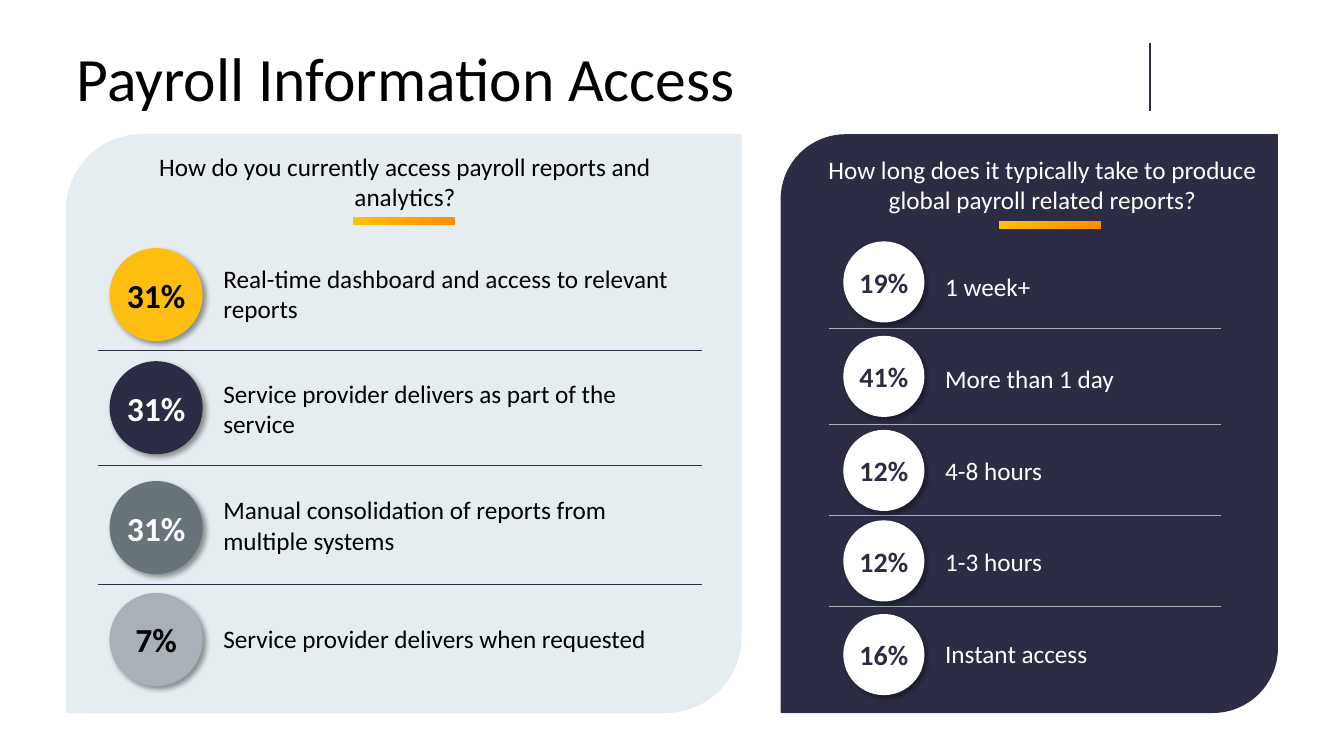
"""Build the payroll information access slide."""
from dataclasses import dataclass

from lxml import etree
from pptx import Presentation
from pptx.dml.color import RGBColor
from pptx.enum.shapes import MSO_CONNECTOR, MSO_SHAPE
from pptx.enum.text import MSO_ANCHOR, PP_ALIGN
from pptx.oxml import parse_xml
from pptx.oxml.ns import nsdecls, qn
from pptx.shapes.autoshape import Shape
from pptx.slide import Slide
from pptx.util import Cm, Pt

STRAIGHT = MSO_CONNECTOR.STRAIGHT
CIRCLE = MSO_SHAPE.OVAL
RECTANGLE = MSO_SHAPE.RECTANGLE
ROUNDED_DIAGONAL = MSO_SHAPE.ROUND_2_DIAG_RECTANGLE
MIDDLE = MSO_ANCHOR.MIDDLE
TOP = MSO_ANCHOR.TOP
LEFT = PP_ALIGN.LEFT
CENTER = PP_ALIGN.CENTER


@dataclass(frozen=True)
class Theme:
    font: str = "Calibri"
    black: str = "000000"
    white: str = "FFFFFF"
    navy: str = "2C2D44"
    mist: str = "E5EDF0"
    yellow: str = "FEBD11"
    slate: str = "68737A"
    silver: str = "A7B1B7"
    accent_start: str = "FFC009"
    accent_end: str = "FF8D02"
    title_size: float = 44
    large_size: float = 24
    medium_size: float = 20
    body_size: float = 18


@dataclass(frozen=True)
class Box:
    left: float
    top: float
    width: float
    height: float

    def lengths(self) -> tuple[Cm, Cm, Cm, Cm]:
        """Return the box as lengths in centimetres."""
        return Cm(self.left), Cm(self.top), Cm(self.width), Cm(self.height)


@dataclass(frozen=True)
class Panel:
    question: str
    frame: Box
    heading: Box
    accent: Box
    fill: str
    text_color: str
    divider_color: str
    divider_left: float
    divider_right: float
    divider_tops: tuple[float, ...]


@dataclass(frozen=True)
class Badge:
    share: str
    top: float
    fill: str
    text_color: str


@dataclass(frozen=True)
class Answer:
    text: str
    top: float
    height: float


THEME = Theme()
TITLE = Box(1.68, 1.09, 27.64, 1.96)
TIME_LIST = Box(23.57, 6.71, 6.88, 10.26)
TIME_GAP = 44

PANELS = (
    Panel("How do you currently access payroll reports and analytics?",
          Box(1.68, 3.4, 16.99, 14.55), Box(2.79, 3.68, 14.83, 1.8), Box(8.89, 5.46, 2.59, 0.2),
          THEME.mist, THEME.black, THEME.navy, 2.46, 17.68, (8.84, 11.73, 14.73)),
    Panel("How long does it typically take to produce global payroll related reports?",
          Box(19.69, 3.4, 12.5, 14.55), Box(20.35, 3.76, 11.84, 1.8), Box(25.17, 5.56, 2.59, 0.2),
          THEME.navy, THEME.white, THEME.silver, 20.88, 30.78, (8.28, 10.69, 12.98, 15.29)),
)
ACCESS_BADGES = (
    Badge("31%", 6.27, THEME.yellow, THEME.black),
    Badge("31%", 9.12, THEME.navy, THEME.white),
    Badge("31%", 12.14, THEME.slate, THEME.white),
    Badge("7%", 14.96, THEME.silver, THEME.black),
)
ACCESS_ANSWERS = (
    Answer("Real-time dashboard and access to relevant reports", 6.5, 1.8),
    Answer("Service provider delivers as part of the service", 9.4, 1.8),
    Answer("Manual consolidation of reports from multiple systems", 12.34, 1.8),
    Answer("Service provider delivers when requested", 15.57, 1.02),
)
TIME_BADGES = tuple(
    Badge(share, top, THEME.white, THEME.navy)
    for share, top in (("19%", 6.1), ("41%", 8.48), ("12%", 10.85), ("12%", 13.13), ("16%", 15.49))
)
TIME_ANSWERS = ("1 week+", "More than 1 day", "4-8 hours", "1-3 hours", "Instant access")


def write(shape: Shape, lines: tuple[str, ...], size: float, color: str, align: PP_ALIGN = LEFT,
          anchor: MSO_ANCHOR = TOP, bold: bool = False, gap: float = 0, spacing: float = 1) -> None:
    """Write one paragraph per line into a shape."""
    frame = shape.text_frame
    frame.word_wrap = True
    frame.vertical_anchor = anchor
    for index, line in enumerate(lines):
        paragraph = frame.add_paragraph() if index else frame.paragraphs[0]
        paragraph.alignment = align
        paragraph.line_spacing = spacing
        paragraph.space_before = Pt(gap if index else 0)
        run = paragraph.add_run()
        run.text = line
        run.font.name = THEME.font
        run.font.size = Pt(size)
        run.font.bold = bold
        run.font.color.rgb = RGBColor.from_string(color)


def add_filled(slide: Slide, kind: MSO_SHAPE, box: Box, color: str) -> Shape:
    """Add a shape whose fill and outline share one colour."""
    shape = slide.shapes.add_shape(kind, *box.lengths())
    shape.shadow.inherit = False
    shape.fill.solid()
    shape.fill.fore_color.rgb = RGBColor.from_string(color)
    shape.line.color.rgb = RGBColor.from_string(color)
    shape.line.width = Pt(1)
    return shape


def add_line(slide: Slide, start: tuple[float, float], end: tuple[float, float],
             color: str, width: float) -> None:
    """Add a straight line without a shadow."""
    line = slide.shapes.add_connector(STRAIGHT, *map(Cm, start + end))
    line.line.color.rgb = RGBColor.from_string(color)
    line.line.width = Pt(width)
    etree.SubElement(line._element.spPr, qn("a:effectLst"))


def add_badge(slide: Slide, badge: Badge, left: float, diameter: float, size: float) -> None:
    """Add a shadowed circle that holds a percentage."""
    circle = add_filled(slide, CIRCLE, Box(left, badge.top, diameter, diameter), badge.fill)
    circle._element.spPr.find(qn("a:effectLst")).append(parse_xml(
        f'<a:outerShdw {nsdecls("a")} blurRad="50800" dist="38100" dir="2700000" algn="tl" '
        'rotWithShape="0"><a:prstClr val="black"><a:alpha val="40000"/></a:prstClr></a:outerShdw>'))
    frame = circle.text_frame
    frame.margin_left = frame.margin_right = frame.margin_top = frame.margin_bottom = 0
    write(circle, (badge.share,), size, badge.text_color, CENTER, MIDDLE, bold=True)


def add_panel(slide: Slide, panel: Panel) -> None:
    """Add a panel with its question, accent bar and dividers."""
    background = add_filled(slide, ROUNDED_DIAGONAL, panel.frame, panel.fill)
    background.adjustments[0] = 0.13
    background.adjustments[1] = 0
    heading = slide.shapes.add_textbox(*panel.heading.lengths())
    write(heading, (panel.question,), THEME.body_size, panel.text_color, CENTER)
    accent = add_filled(slide, RECTANGLE, panel.accent, THEME.accent_start)
    accent.line.fill.background()
    accent.fill.gradient()
    accent.fill.gradient_angle = 0
    for stop, color in zip(accent.fill.gradient_stops, (THEME.accent_start, THEME.accent_end)):
        stop.color.rgb = RGBColor.from_string(color)
    for top in panel.divider_tops:
        add_line(slide, (panel.divider_left, top), (panel.divider_right, top), panel.divider_color, 0.5)


def main() -> None:
    """Build and save the presentation."""
    presentation = Presentation()
    presentation.slide_width, presentation.slide_height = Cm(33.87), Cm(19.05)
    slide = presentation.slides.add_slide(presentation.slide_layouts[6])
    title = slide.shapes.add_textbox(*TITLE.lengths())
    write(title, ("Payroll Information Access",), THEME.title_size, THEME.black, spacing=0.9)
    add_line(slide, (28.98, 1.09), (28.98, 2.79), THEME.navy, 1)
    for panel in PANELS:
        add_panel(slide, panel)
    for badge in ACCESS_BADGES:
        add_badge(slide, badge, 2.78, 2.31, THEME.large_size)
    for answer in ACCESS_ANSWERS:
        label = slide.shapes.add_textbox(*Box(5.38, answer.top, 11.86, answer.height).lengths())
        write(label, (answer.text,), THEME.body_size, THEME.black)
    for badge in TIME_BADGES:
        add_badge(slide, badge, 21.27, 2.01, THEME.medium_size)
    times = slide.shapes.add_textbox(*TIME_LIST.lengths())
    write(times, TIME_ANSWERS, THEME.body_size, THEME.white, gap=TIME_GAP)
    presentation.save("out.pptx")


if __name__ == "__main__":
    main()
